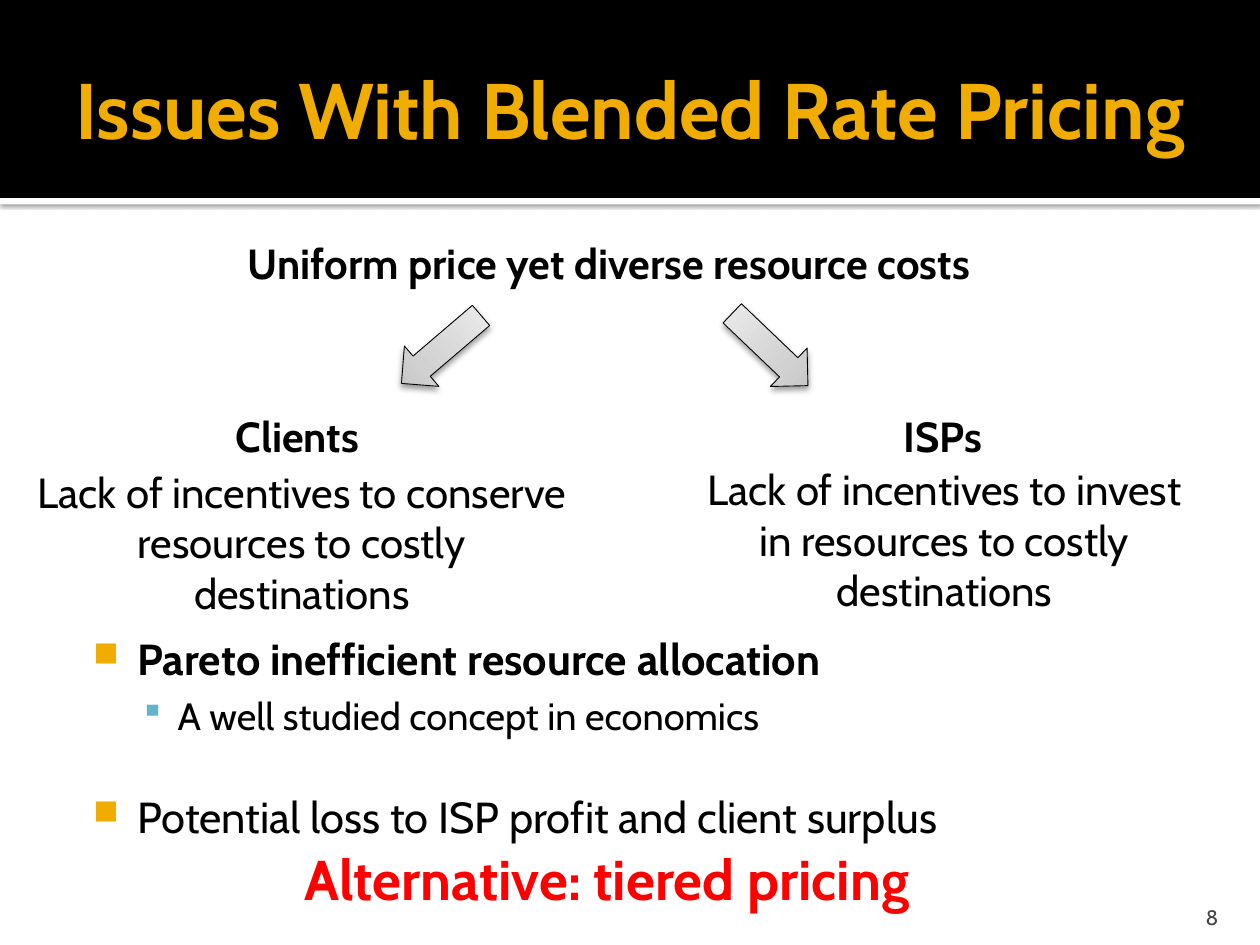
from lxml import etree
from pptx import Presentation
from pptx import util as u
from pptx.dml.color import RGBColor
from pptx.enum import shapes, text
from pptx.oxml import ns

COLORS = {
    "black": "000000", "white": "FFFFFF", "gold": "F0AD00", "blue": "60B5CC",
    "red": "FF0000", "gray": "454545",
}
ARROW_STOPS = [(0, "BDBDBD"), (35, "D1D1D1"), (100, "EEEEEE")]
FONT = "Cabin"
CENTER, RIGHT = text.PP_ALIGN.CENTER, text.PP_ALIGN.RIGHT
TOP, MIDDLE, BOTTOM = (text.MSO_ANCHOR.TOP, text.MSO_ANCHOR.MIDDLE,
                       text.MSO_ANCHOR.BOTTOM)


def rgb(name):
    return RGBColor.from_string(COLORS[name])


def add_child(parent, tag, **attributes):
    child = etree.SubElement(parent, ns.qn(tag))
    for key, value in attributes.items():
        child.set(key, str(value))
    return child


def add_span(para, words, size, color="black", bold=False):
    span = para.add_run()
    span.text = words
    formats = {"name": FONT, "size": u.Pt(size), "bold": bold}
    for key, value in formats.items():
        setattr(span.font, key, value)
    span.font.color.rgb = rgb(color)


def add_box(page, place, wrap=False, anchor=TOP, insets=(0.25, 0.13, 0.25, 0.13)):
    """Add an empty text box; place and insets are in centimetres."""
    frame = page.shapes.add_textbox(*map(u.Cm, place)).text_frame
    left, top, right, bottom = map(u.Cm, insets)
    formats = {
        "word_wrap": wrap, "vertical_anchor": anchor,
        "margin_left": left, "margin_top": top,
        "margin_right": right, "margin_bottom": bottom,
    }
    for key, value in formats.items():
        setattr(frame, key, value)
    return frame


def add_label(page, place, lines, size=24, color="black", bold=False,
              align=None, **box_formats):
    frame = add_box(page, place, **box_formats)
    for index, line in enumerate(lines):
        para = frame.add_paragraph() if index else frame.paragraphs[0]
        para.alignment = align
        add_span(para, line, size, color, bold)


def add_bullet(para, mark, color, percent, left, hanging):
    props = para._p.get_or_add_pPr()
    props.set("marL", str(u.Cm(left)))
    props.set("indent", str(-u.Cm(hanging)))
    add_child(add_child(props, "a:buClr"), "a:srgbClr", val=COLORS[color])
    add_child(props, "a:buSzPct", val=percent * 1000)
    add_child(props, "a:buChar", char=mark)


def add_shadow(shape, alpha, blur, distance):
    """Add a downward black shadow; blur and distance are in points."""
    effects = add_child(shape._element.spPr, "a:effectLst")
    shadow = add_child(effects, "a:outerShdw", blurRad=u.Pt(blur),
                       dist=u.Pt(distance), dir=5400000, rotWithShape=0)
    tint = add_child(shadow, "a:srgbClr", val=COLORS["black"])
    add_child(tint, "a:alpha", val=alpha * 1000)


def add_band(page, top, height, color):
    band = page.shapes.add_shape(shapes.MSO_SHAPE.RECTANGLE, 0, u.Cm(top),
                                 u.Cm(25.4), u.Cm(height))
    band.fill.solid()
    band.fill.fore_color.rgb = rgb(color)
    band.line.fill.background()
    return band


def add_arrow(page, left, rotation):
    arrow = page.shapes.add_shape(shapes.MSO_SHAPE.DOWN_ARROW,
                                  *map(u.Cm, (left, 5.99, 1.07, 2.11)))
    arrow.rotation = rotation
    arrow.fill.gradient()
    arrow.fill.gradient_angle = 90
    stops = arrow._element.spPr.find(ns.qn("a:gradFill")).find(ns.qn("a:gsLst"))
    for stop in list(stops):
        stops.remove(stop)
    for position, color in ARROW_STOPS:
        stop = add_child(stops, "a:gs", pos=position * 1000)
        add_child(stop, "a:srgbClr", val=color)
    arrow.line.color.rgb = rgb("black")
    arrow.line.width = u.Pt(0.5)
    add_shadow(arrow, 38, 3.5, 2)


def add_points(page):
    major = ("■", "gold", 80, 1.22, 0.89)
    minor = ("▪", "blue", 90, 2.03, 0.76)
    points = [
        ("Pareto inefficient resource allocation", major, 24.8, True, 0),
        ("A well studied concept in economics", minor, 21.7, False, 4.3),
        ("Potential loss to ISP profit and client surplus", major, 24.8, False, 30),
    ]
    frame = add_box(page, (1.4, 12.5, 22.86, 4.01), wrap=True,
                    insets=(0.15, 0.25, 0.25, 0.13))
    for index, (words, bullet, size, bold, gap) in enumerate(points):
        para = frame.add_paragraph() if index else frame.paragraphs[0]
        para.level = int(bullet is minor)
        add_bullet(para, *bullet)
        para.space_before = u.Pt(gap)
        add_span(para, words, size, bold=bold)


def main():
    deck = Presentation()
    deck.slide_width, deck.slide_height = u.Cm(25.4), u.Cm(19.05)
    page = deck.slides.add_slide(deck.slide_layouts[6])

    add_shadow(add_band(page, 3.99, 0.13, "white"), 60, 2.5, 0.8)
    add_band(page, 0, 3.99, "black").shadow.inherit = False
    add_label(page, (1.27, 0.43, 22.86, 3.48), ["Issues With Blended Rate Pricing"],
              45, "gold", True, wrap=True, anchor=MIDDLE,
              insets=(0.25, 0.13, 0.13, 0.13))
    add_label(page, (22.78, 17.98, 2.03, 0.76), ["8"], 12, "gray", align=RIGHT,
              wrap=True, anchor=BOTTOM, insets=(0.25, 0.13, 0.25, 0))

    add_label(page, (4.65, 4.65, 15.44, 1.27),
              ["Uniform price yet diverse resource costs "], bold=True, align=CENTER)
    add_label(page, (0.41, 9.27, 11.35, 2.31),
              ["Lack of incentives to conserve", "resources to costly destinations"],
              align=CENTER, wrap=True)
    add_label(page, (12.96, 9.22, 12.16, 2.31),
              ["Lack of incentives to invest", "in resources to costly destinations"],
              align=CENTER, wrap=True)
    add_points(page)
    add_arrow(page, 8.36, 49.5)
    add_arrow(page, 14.99, 313.7)
    add_label(page, (4.5, 8.15, 3.05, 1.27), ["Clients"], bold=True)
    add_label(page, (17.96, 8.15, 2.11, 1.27), ["ISPs"], bold=True)
    add_label(page, (5.89, 16.89, 13.13, 1.63), ["Alternative: tiered pricing"],
              32, "red", True)
    deck.save("out.pptx")


if __name__ == "__main__":
    main()
